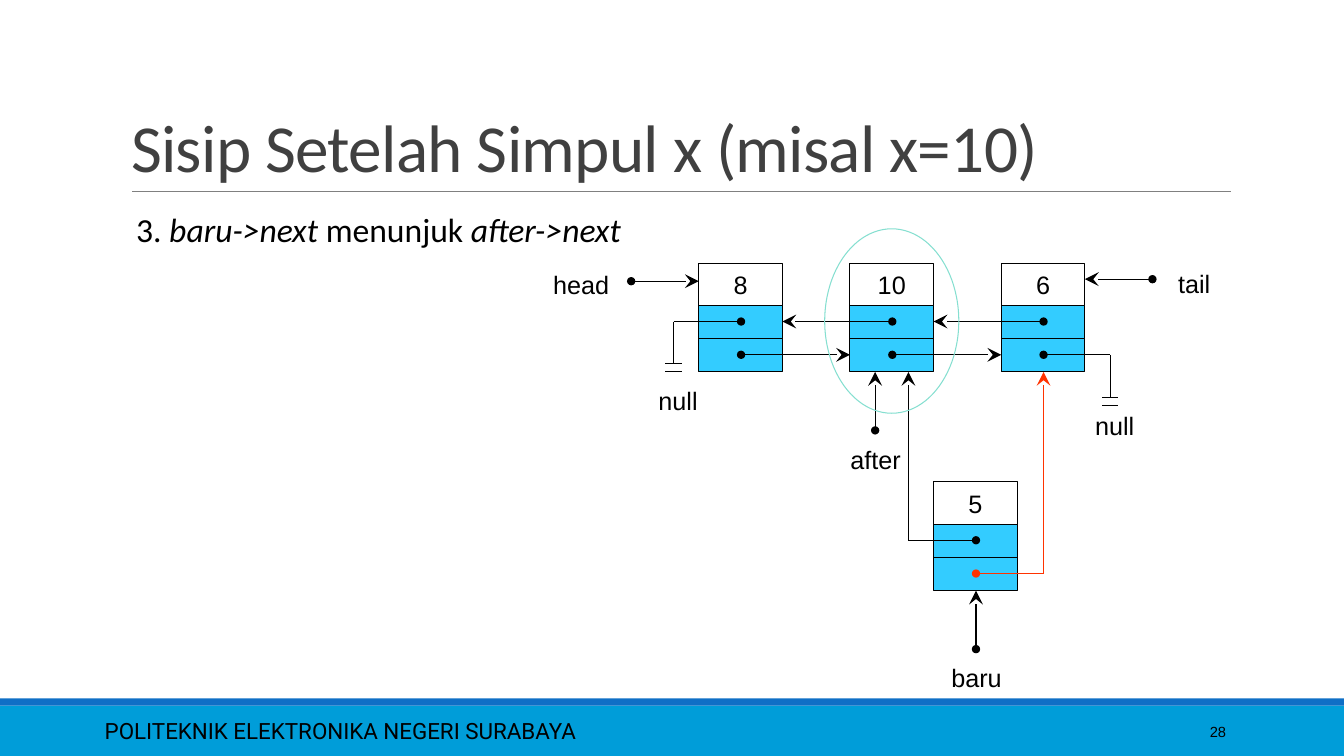
import pptx
import pptx.dml.color
import pptx.enum.shapes
import pptx.enum.text
import pptx.oxml
import pptx.util

RGBColor = pptx.dml.color.RGBColor
Shape = pptx.enum.shapes.MSO_SHAPE
Align = pptx.enum.text.PP_ALIGN
Anchor = pptx.enum.text.MSO_ANCHOR

BLACK = RGBColor(0x00, 0x00, 0x00)
TITLE_GREY = RGBColor(0x40, 0x40, 0x40)
RULE_GREY = RGBColor(0x80, 0x80, 0x80)
FOOTER_BLUE = RGBColor(0x00, 0x9D, 0xD9)
STRIPE_BLUE = RGBColor(0x0F, 0x6F, 0xC6)
POINTER_CYAN = RGBColor(0x33, 0xCC, 0xFF)
NEW_LINK_RED = RGBColor(0xFF, 0x33, 0x00)
MARK_GREEN = RGBColor(0x85, 0xDF, 0xD0)

PX = 9144  # EMU in one px, 100 px to the inch
NODE_WIDTH, VALUE_HEIGHT, POINTER_HEIGHT = 83, 42, 33
NODE_HEIGHT = VALUE_HEIGHT + 2 * POINTER_HEIGHT
PREV_Y, NEXT_Y = 58, 91  # pointer lines below the top of a node


def write_text(frame, *runs, size=18, font="Arial", color=BLACK, align=Align.LEFT,
               anchor=Anchor.MIDDLE, wrap=True, spacing=None, tracking=None):
    """Fill a frame with one paragraph of (text, italic) runs."""
    frame.word_wrap = wrap
    frame.auto_size = pptx.enum.text.MSO_AUTO_SIZE.NONE
    frame.vertical_anchor = anchor
    paragraph = frame.paragraphs[0]
    paragraph.alignment = align
    paragraph.space_before = pptx.util.Pt(0)
    if spacing:
        paragraph.line_spacing = spacing
    for text, italic in runs:
        run = paragraph.add_run()
        run.text = text
        run.font.name, run.font.size = font, pptx.util.Pt(size)
        run.font.italic = italic
        run.font.color.rgb = color
        if tracking:
            run.font._element.set("spc", str(tracking))
    return paragraph


class ListSlide:
    def __init__(self, presentation):
        self.slide = presentation.slides.add_slide(presentation.slide_layouts[1])
        self.shapes = self.slide.shapes
        self.line_width = pptx.util.Pt(0.75)

    def placeholder(self, index, left, top, width, height):
        holder = self.slide.placeholders[index]
        holder.left, holder.top = left * PX, top * PX
        holder.width, holder.height = width * PX, height * PX
        return holder.text_frame

    def shape(self, kind, left, top, width, height, fill=None, line=None):
        shape = self.shapes.add_shape(kind, left * PX, top * PX, width * PX, height * PX)
        shape.shadow.inherit = False
        if fill is None:
            shape.fill.background()
        else:
            shape.fill.solid()
            shape.fill.fore_color.rgb = fill
        if line is None:
            shape.line.fill.background()
        else:
            shape.line.color.rgb = line
            shape.line.width = self.line_width
        return shape

    def label(self, text, left, top, width, height=40, **style):
        box = self.shapes.add_textbox(left * PX, top * PX, width * PX, height * PX)
        write_text(box.text_frame, (text, False), **style)

    def line(self, x1, y1, x2, y2, color=BLACK, dot=False, arrow=False, width=None):
        connector = self.shapes.add_connector(
            pptx.enum.shapes.MSO_CONNECTOR.STRAIGHT, x1 * PX, y1 * PX, x2 * PX, y2 * PX)
        connector.line.color.rgb = color
        connector.line.width = width or self.line_width
        outline = connector.line._get_or_add_ln()
        for wanted, tag, kind, size in ((dot, "headEnd", "oval", "med"),
                                        (arrow, "tailEnd", "stealth", "lg")):
            if wanted:
                outline.append(pptx.oxml.parse_xml(
                    f'<a:{tag} xmlns:a="http://schemas.openxmlformats.org/drawingml/2006/main"'
                    f' type="{kind}" w="{size}" len="{size}"/>'))
        properties = connector._element.spPr
        properties.append(properties.makeelement(pptx.oxml.ns.qn("a:effectLst"), {}))

    def node(self, value, left, top):
        cell = self.shape(Shape.RECTANGLE, left, top, NODE_WIDTH, VALUE_HEIGHT, line=BLACK)
        write_text(cell.text_frame, (value, False), align=Align.CENTER)
        for row in range(2):
            self.shape(Shape.RECTANGLE, left, top + VALUE_HEIGHT + row * POINTER_HEIGHT,
                       NODE_WIDTH, POINTER_HEIGHT, POINTER_CYAN, BLACK)

    def null_link(self, from_x, to_x, y):
        self.line(from_x, y, to_x, y, dot=True)
        self.line(to_x, y, to_x, y + 42)
        for plate_y in (y + 42, y + 50):
            self.line(to_x - 8, plate_y, to_x + 8, plate_y)


def main():
    presentation = pptx.Presentation()
    presentation.slide_width, presentation.slide_height = 1333 * PX, 750 * PX
    page = ListSlide(presentation)

    # Footer and title rule
    page.shape(Shape.RECTANGLE, 0, 700, 1333, 50, FOOTER_BLUE)
    page.shape(Shape.RECTANGLE, 0, 693, 1333, 7, STRIPE_BLUE)
    page.line(131, 190, 1221, 190, RULE_GREY, width=pptx.util.Pt(0.5))
    page.label("POLITEKNIK ELEKTRONIKA NEGERI SURABAYA", 94, 705, 841, size=16, font="Roboto")
    page.label("28", 1083, 706, 143, size=10.5, align=Align.RIGHT)

    # Title and step
    write_text(page.placeholder(0, 120, 31, 1100, 159),
               ("Sisip Setelah Simpul x (misal x=10)", False), size=48, font="Calibri",
               color=TITLE_GREY, anchor=Anchor.BOTTOM, spacing=0.85, tracking=-50)
    step = write_text(page.placeholder(1, 125, 202, 833, 50),
                      ("3. ", False), ("baru->next ", True), ("menunjuk ", False),
                      ("after->next", True), size=24, font="Calibri", anchor=Anchor.TOP)
    step_format = step._p.get_or_add_pPr()
    step_format.set("marL", str(38 * PX))
    step_format.set("indent", str(-38 * PX))
    step_format.append(step_format.makeelement(pptx.oxml.ns.qn("a:buNone"), {}))

    # Nodes
    list_top, new_left, new_top = 261, 926, 478
    lefts = [693 + 150 * column for column in range(3)]
    centers = [left + 42 for left in lefts]
    for value, left in zip(("8", "10", "6"), lefts):
        page.node(value, left, list_top)
    page.node("5", new_left, new_top)

    # Links between neighbours and to null
    list_bottom = list_top + NODE_HEIGHT
    prev_y, next_y = list_top + PREV_Y, list_top + NEXT_Y
    for column in range(2):
        page.line(centers[column], next_y, lefts[column + 1], next_y, dot=True, arrow=True)
        page.line(centers[column + 1], prev_y, lefts[column] + NODE_WIDTH, prev_y,
                  dot=True, arrow=True)
    page.null_link(centers[0], 668, prev_y)
    page.null_link(centers[2], 1101, next_y)

    # Links of the new node
    new_center = new_left + 42
    for y, turn_x, color in ((new_top + PREV_Y, 901, BLACK),
                             (new_top + NEXT_Y, centers[2], NEW_LINK_RED)):
        page.line(new_center, y, turn_x, y, color, dot=True)
        page.line(turn_x, y, turn_x, list_bottom, color, arrow=True)

    # Named pointers
    for ends in ((626, 279, lefts[0], 279),
                 (1143, 277, lefts[2] + NODE_WIDTH, 277),
                 (868, 427, 868, list_bottom),
                 (new_center, 644, new_center, new_top + NODE_HEIGHT)):
        page.line(*ends, dot=True, arrow=True)
    for text, left, top, width in (("head", 535, 262, 83), ("tail", 1143, 261, 83),
                                   ("null", 635, 377, 75), ("null", 1068, 402, 75),
                                   ("after", 810, 436, 117), ("baru", 910, 652, 117)):
        page.label(text, left, top, width, align=Align.CENTER)

    # Mark around node x
    page.shape(Shape.OVAL, 818, 227, 133, 183, line=MARK_GREEN)

    presentation.save("out.pptx")


if __name__ == "__main__":
    main()
